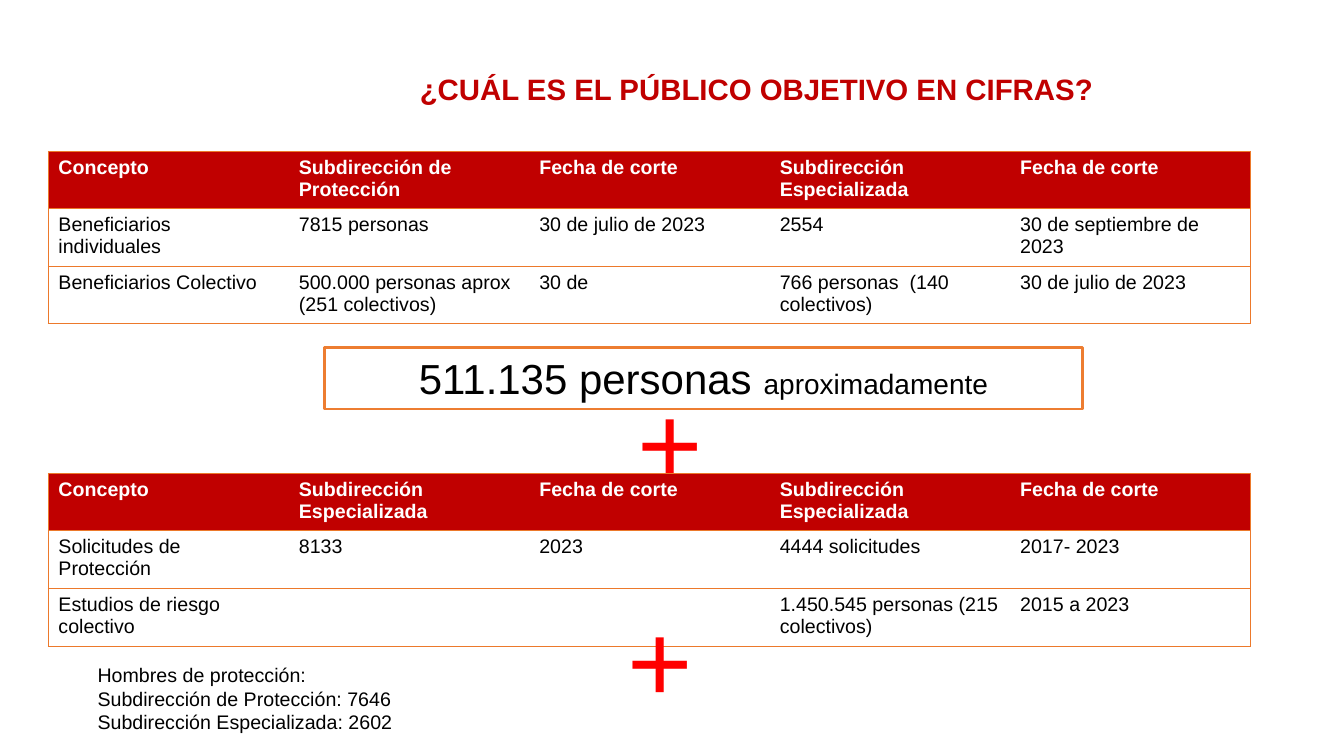
from dataclasses import dataclass

from lxml.etree import SubElement
from pptx import Presentation
from pptx.dml.color import RGBColor
from pptx.enum.shapes import MSO_SHAPE
from pptx.enum.text import MSO_ANCHOR, MSO_AUTO_SIZE, PP_ALIGN
from pptx.oxml.ns import qn
from pptx.util import Cm, Pt


@dataclass(frozen=True)
class Theme:
    font: str = "Arial"
    red: str = "C00000"
    plus_red: str = "FF0000"
    border: str = "EC792B"
    outline: str = "ED7D31"
    white: str = "FFFFFF"
    black: str = "000000"
    title_size: int = 21
    body_size: int = 14
    total_size: int = 30
    detail_size: int = 20
    plus_size: int = 80
    border_width: float = 0.75
    outline_width: float = 2


class SlideBuilder:
    """Draw styled elements on the current slide."""

    def __init__(self, theme, slide):
        self.theme = theme
        self.slide = slide

    def add_text_run(self, paragraph, text, size, color, bold=False):
        run = paragraph.add_run()
        run.text = text
        values = {"name": self.theme.font, "size": Pt(size), "bold": bold}
        for name, value in values.items():
            setattr(run.font, name, value)
        run.font.color.rgb = RGBColor.from_string(color)

    def format_frame(self, frame, **values):
        for name, value in values.items():
            setattr(frame, name, value)

    def title(self, text, left, top, width, height):
        shape = self.slide.shapes.title
        position = {"left": left, "top": top, "width": width, "height": height}
        for name, value in position.items():
            setattr(shape, name, Cm(value))
        self.format_frame(
            shape.text_frame, word_wrap=True, auto_size=MSO_AUTO_SIZE.NONE,
            vertical_anchor=MSO_ANCHOR.TOP, margin_left=Cm(0.18),
            margin_right=Cm(0.18), margin_top=Cm(0.08), margin_bottom=Cm(0.08))
        paragraph = shape.text_frame.paragraphs[0]
        paragraph.alignment = PP_ALIGN.CENTER
        self.add_text_run(paragraph, text, self.theme.title_size, self.theme.red, True)

    def text(self, lines, size, color, left, top, width, height):
        box = self.slide.shapes.add_textbox(Cm(left), Cm(top), Cm(width), Cm(height))
        frame = box.text_frame
        self.format_frame(frame, word_wrap=True,
                          auto_size=MSO_AUTO_SIZE.SHAPE_TO_FIT_TEXT)
        for index, line in enumerate(lines):
            paragraph = frame.add_paragraph() if index else frame.paragraphs[0]
            self.add_text_run(paragraph, line, size, color)

    def plus(self, left, top):
        self.text(["+"], self.theme.plus_size, self.theme.plus_red,
                  left, top, 3.63, 3.68)

    def total(self, number, detail, left, top, width, height):
        theme = self.theme
        shape = self.slide.shapes.add_shape(
            MSO_SHAPE.RECTANGLE, Cm(left), Cm(top), Cm(width), Cm(height))
        shape.shadow.inherit = False
        shape.fill.solid()
        shape.fill.fore_color.rgb = RGBColor.from_string(theme.white)
        shape.line.color.rgb = RGBColor.from_string(theme.outline)
        shape.line.width = Pt(theme.outline_width)
        self.format_frame(shape.text_frame, word_wrap=True,
                          vertical_anchor=MSO_ANCHOR.TOP)
        paragraph = shape.text_frame.paragraphs[0]
        paragraph.alignment = PP_ALIGN.CENTER
        self.add_text_run(paragraph, number + " ", theme.total_size, theme.black)
        self.add_text_run(paragraph, detail, theme.detail_size, theme.black)

    def cell_borders(self, cell, visible_sides):
        properties = cell._tc.get_or_add_tcPr()
        for side in "LRTB":
            line = SubElement(properties, qn(f"a:ln{side}"),
                              w=str(Pt(self.theme.border_width)))
            if side in visible_sides:
                fill = SubElement(line, qn("a:solidFill"))
                SubElement(fill, qn("a:srgbClr"), val=self.theme.border)
            else:
                SubElement(line, qn("a:noFill"))

    def table(self, rows, left, top, column_width, row_height):
        theme = self.theme
        row_count, column_count = len(rows), len(rows[0])
        table = self.slide.shapes.add_table(
            row_count, column_count, Cm(left), Cm(top),
            Cm(column_width * column_count), Cm(row_height * row_count)).table
        table.first_row = table.horz_banding = False
        for row_index, row in enumerate(rows):
            header = row_index == 0
            for column_index, text in enumerate(row):
                cell = table.cell(row_index, column_index)
                sides = "TB"
                if column_index == 0:
                    sides += "L"
                if column_index == column_count - 1:
                    sides += "R"
                self.cell_borders(cell, sides)
                cell.fill.solid()
                cell.fill.fore_color.rgb = RGBColor.from_string(
                    theme.red if header else theme.white)
                if text:
                    self.add_text_run(
                        cell.text_frame.paragraphs[0], text, theme.body_size,
                        theme.white if header else theme.black, header)


def main():
    presentation = Presentation()
    presentation.slide_width, presentation.slide_height = Cm(33.87), Cm(19.05)
    slide = presentation.slides.add_slide(presentation.slide_layouts[5])
    theme = Theme()
    builder = SlideBuilder(theme, slide)
    grid = {"left": 1.22, "column_width": 6.06, "row_height": 1.45}

    builder.title("¿CUÁL ES EL PÚBLICO OBJETIVO EN CIFRAS?", 9.12, 1.7, 19.89, 1.57)
    builder.table([
        ["Concepto", "Subdirección de Protección", "Fecha de corte",
         "Subdirección Especializada", "Fecha de corte"],
        ["Beneficiarios individuales", "7815 personas", "30 de julio de 2023",
         "2554", "30 de septiembre de 2023"],
        ["Beneficiarios Colectivo", "500.000 personas aprox (251 colectivos)",
         "30 de", "766 personas  (140 colectivos)", "30 de julio de 2023"],
    ], top=3.81, **grid)
    builder.total("511.135 personas", "aproximadamente", 8.18, 8.76, 19.1, 1.55)
    builder.plus(15.82, 9.27)
    builder.table([
        ["Concepto", "Subdirección Especializada", "Fecha de corte",
         "Subdirección Especializada", "Fecha de corte"],
        ["Solicitudes de Protección", "8133", "2023", "4444 solicitudes",
         "2017- 2023"],
        ["Estudios de riesgo colectivo", "", "",
         "1.450.545 personas (215 colectivos)", "2015 a 2023"],
    ], top=11.93, **grid)
    builder.plus(15.57, 14.76)
    builder.text([
        "Hombres de protección:",
        "Subdirección de Protección: 7646",
        "Subdirección Especializada: 2602",
    ], theme.body_size, theme.black, 2.21, 16.59, 12.7, 2.06)
    presentation.save("out.pptx")


if __name__ == "__main__":
    main()
